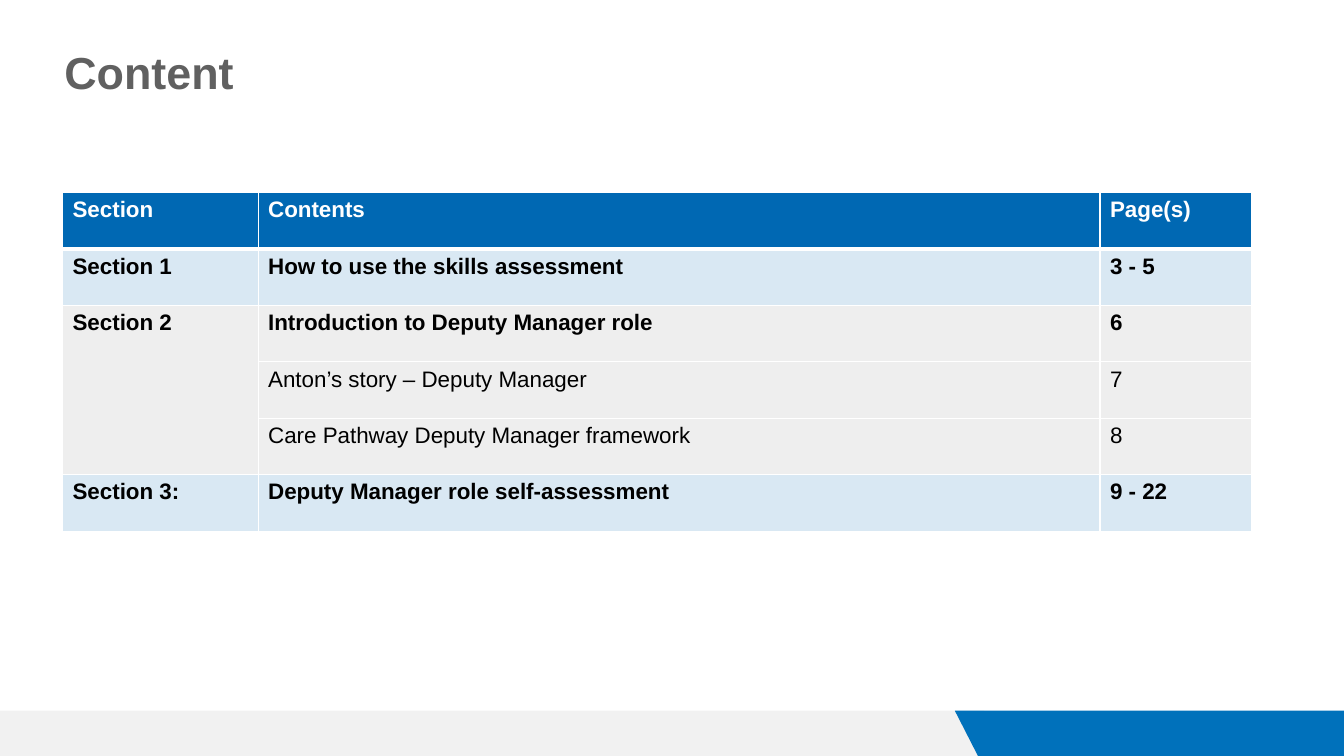
from lxml import etree
from pptx import Presentation, util as u
from pptx.dml.color import RGBColor
from pptx.enum import text
from pptx.oxml.ns import qn

WHITE = RGBColor(0xFF, 0xFF, 0xFF)
BLACK = RGBColor(0x00, 0x00, 0x00)
TITLE_GREY = RGBColor(0x60, 0x60, 0x60)
SOFT_GREY = RGBColor(0xCA, 0xCA, 0xCA)
TABLE_BLUE = RGBColor(0x00, 0x68, 0xB3)
FOOTER_BLUE = RGBColor(0x00, 0x71, 0xBB)

COLUMN_WIDTHS = [1.94, 8.35, 1.5]
ROW_HEIGHT = 0.56
HEADER = dict(fill=TABLE_BLUE, opacity=100, color=WHITE, bold=True)
BLUE_ROW = dict(fill=TABLE_BLUE, opacity=15, color=BLACK, bold=True)
GREY_ROW = dict(fill=SOFT_GREY, opacity=30, color=BLACK, bold=True)
DETAIL_ROW = dict(GREY_ROW, bold=False)
ROWS = [
    (HEADER, ["Section", "Contents", "Page(s)"]),
    (BLUE_ROW, ["Section 1", "How to use the skills assessment", "3 - 5"]),
    (GREY_ROW, ["Section 2", "Introduction to Deputy Manager role", "6"]),
    (DETAIL_ROW, ["", "Anton’s story – Deputy Manager", "7"]),
    (DETAIL_ROW, ["", "Care Pathway Deputy Manager framework", "8"]),
    (BLUE_ROW, ["Section 3:", "Deputy Manager role self-assessment", "9 - 22"]),
]


class PageBuilder:
    def __init__(self, page, font_name):
        self.page = page
        self.font_name = font_name

    def paint(self, target, element, color, opacity):
        target.fill.solid()
        target.fill.fore_color.rgb = color
        if opacity < 100:
            tint = element.find(qn("a:solidFill")).find(qn("a:srgbClr"))
            etree.SubElement(tint, qn("a:alpha"), val=str(opacity * 1000))

    def add_words(self, frame, words, size, color, bold):
        span = frame.paragraphs[0].add_run()
        span.text = words
        values = dict(name=self.font_name, size=u.Pt(size), bold=bold)
        for key, value in values.items():
            setattr(span.font, key, value)
        span.font.color.rgb = color

    def title(self, words, left, top, width, height):
        box = self.page.shapes.add_textbox(*map(u.Inches, (left, top, width, height)))
        values = dict(word_wrap=True, vertical_anchor=text.MSO_ANCHOR.TOP)
        for key, value in values.items():
            setattr(box.text_frame, key, value)
        self.add_words(box.text_frame, words, 32, TITLE_GREY, True)

    def band(self, corners, color, opacity=100):
        points = [(u.Inches(x), u.Inches(y)) for x, y in corners]
        builder = self.page.shapes.build_freeform(*points[0])
        builder.add_line_segments(points[1:], close=True)
        shape = builder.convert_to_shape()
        shape.shadow.inherit = False
        shape.line.fill.background()
        self.paint(shape, shape._element.spPr, color, opacity)

    def borders(self, cell, bottom_width):
        properties = cell._tc.get_or_add_tcPr()
        widths = dict(lnL=1, lnR=1, lnT=1, lnB=bottom_width)
        for index, (side, width) in enumerate(widths.items()):
            line = etree.Element(qn("a:" + side), w=str(u.Pt(width)))
            fill = etree.SubElement(line, qn("a:solidFill"))
            etree.SubElement(fill, qn("a:srgbClr"), val=str(WHITE))
            properties.insert(index, line)

    def table(self, left, top):
        size = (sum(COLUMN_WIDTHS), ROW_HEIGHT * len(ROWS))
        frame = self.page.shapes.add_table(
            len(ROWS), len(COLUMN_WIDTHS), *map(u.Inches, (left, top, *size)))
        table = frame.table
        for column, width in zip(table.columns, COLUMN_WIDTHS):
            column.width = u.Inches(width)
        for row, (style, entries) in enumerate(ROWS):
            table.rows[row].height = u.Inches(ROW_HEIGHT)
            for column, words in enumerate(entries):
                cell = table.cell(row, column)
                self.paint(cell, cell._tc.get_or_add_tcPr(),
                           style["fill"], style["opacity"])
                self.borders(cell, 3 if style is HEADER else 1)
                if words:
                    self.add_words(cell.text_frame, words, 16, style["color"], style["bold"])
        table.cell(2, 0).merge(table.cell(4, 0))


def main():
    deck = Presentation()
    deck.slide_width = u.Inches(13.33)
    deck.slide_height = u.Inches(7.5)
    page = PageBuilder(deck.slides.add_slide(deck.slide_layouts[6]), "Arial")
    page.band([(0, 7.05), (9.76, 7.05), (9.99, 7.5), (0, 7.5)], SOFT_GREY, 25)
    page.band([(9.47, 7.05), (13.33, 7.05), (13.33, 7.5), (9.7, 7.5)], FOOTER_BLUE)
    page.title("Content", 0.54, 0.39, 9.74, 0.77)
    page.table(0.62, 1.91)
    deck.save("out.pptx")


if __name__ == "__main__":
    main()
